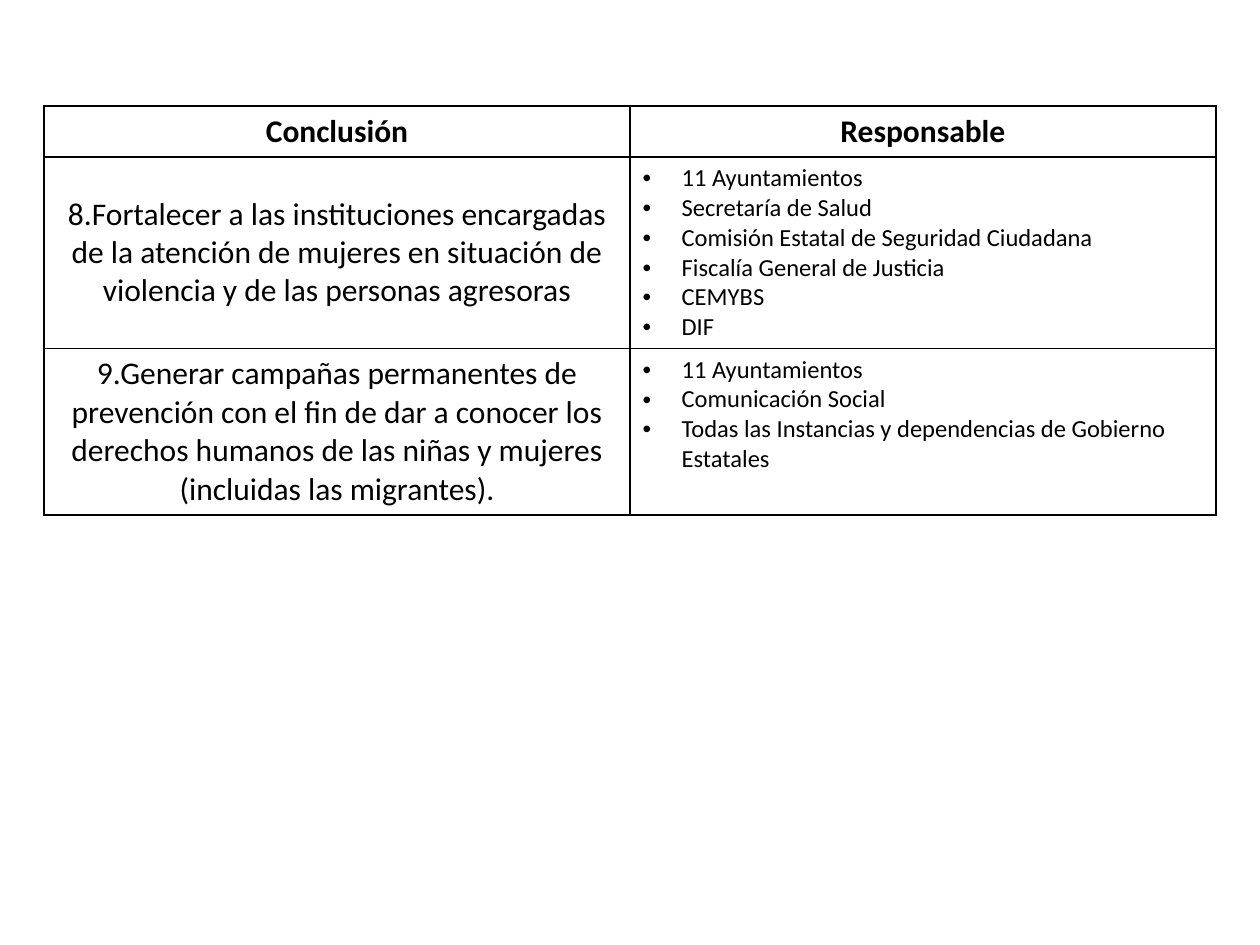
from lxml.etree import SubElement
from pptx import Presentation
from pptx.dml.color import RGBColor
from pptx.enum.text import MSO_ANCHOR, PP_ALIGN
from pptx.oxml.ns import qn
from pptx.util import Inches, Pt

SLIDE_WIDTH, SLIDE_HEIGHT = Inches(10), Inches(7.5)
TABLE_LEFT, TABLE_TOP = Inches(0.35), Inches(0.84)
COLUMN_WIDTH = Inches(4.65)
ROW_HEIGHTS = [Inches(0.4), Inches(1.52), Inches(1.32)]
BULLET_INDENT = Inches(0.31)
INK, PAPER = "000000", "FFFFFF"

HEADINGS = ["Conclusión", "Responsable"]
CONCLUSIONS = [
    (
        "8.Fortalecer a las instituciones encargadas de la atención de mujeres "
        "en situación de violencia y de las personas agresoras",
        [
            "11 Ayuntamientos",
            "Secretaría de Salud",
            "Comisión Estatal de Seguridad Ciudadana",
            "Fiscalía General de Justicia",
            "CEMYBS",
            "DIF",
        ],
    ),
    (
        "9.Generar campañas permanentes de prevención con el fin de dar a conocer "
        "los derechos humanos de las niñas y mujeres (incluidas las migrantes).",
        [
            "11 Ayuntamientos",
            "Comunicación Social",
            "Todas las Instancias y dependencias de Gobierno Estatales",
        ],
    ),
]


def colour(hex_code):
    """Turn a hex string into a colour."""
    return RGBColor.from_string(hex_code)


def frame_cell(cell):
    """Give a cell thin borders on all sides and a plain fill."""
    properties = cell._tc.get_or_add_tcPr()
    for side in ("a:lnL", "a:lnR", "a:lnT", "a:lnB"):
        border = SubElement(properties, qn(side), w=str(Pt(1)))
        border_fill = SubElement(border, qn("a:solidFill"))
        SubElement(border_fill, qn("a:srgbClr"), val=INK)
    cell.fill.solid()
    cell.fill.fore_color.rgb = colour(PAPER)


def write_cell(cell, lines, size, bold=False):
    """Write one paragraph per line and format its text."""
    frame_cell(cell)
    cell.text_frame.text = "\n".join(lines)
    for paragraph in cell.text_frame.paragraphs:
        for run in paragraph.runs:
            run.font.name = "Calibri"
            run.font.size = Pt(size)
            run.font.bold = bold
            run.font.color.rgb = colour(INK)


def write_centred(cell, text, bold=False):
    """Write a centred statement in the middle of a cell."""
    write_cell(cell, [text], 18, bold)
    cell.vertical_anchor = MSO_ANCHOR.MIDDLE
    cell.text_frame.paragraphs[0].alignment = PP_ALIGN.CENTER


def write_bullets(cell, items):
    """Write a bulleted list with a hanging indent."""
    write_cell(cell, items, 14)
    for paragraph in cell.text_frame.paragraphs:
        properties = paragraph._p.get_or_add_pPr()
        properties.set("marL", str(BULLET_INDENT))
        properties.set("indent", str(-BULLET_INDENT))
        SubElement(properties, qn("a:buFont"), typeface="Arial")
        SubElement(properties, qn("a:buChar"), char="•")


def add_conclusions_table(slide):
    """Add the table of conclusions and those responsible for them."""
    table = slide.shapes.add_table(
        len(ROW_HEIGHTS), len(HEADINGS), TABLE_LEFT, TABLE_TOP,
        COLUMN_WIDTH * len(HEADINGS), sum(ROW_HEIGHTS),
    ).table
    table.horz_banding = False
    for row, height in zip(table.rows, ROW_HEIGHTS):
        row.height = height
    for column, heading in enumerate(HEADINGS):
        write_centred(table.cell(0, column), heading, bold=True)
    for row, (conclusion, responsible) in enumerate(CONCLUSIONS, start=1):
        write_centred(table.cell(row, 0), conclusion)
        write_bullets(table.cell(row, 1), responsible)


def main():
    """Build and save the slide."""
    presentation = Presentation()
    presentation.slide_width = SLIDE_WIDTH
    presentation.slide_height = SLIDE_HEIGHT
    slide = presentation.slides.add_slide(presentation.slide_layouts[6])
    add_conclusions_table(slide)
    presentation.save("out.pptx")


if __name__ == "__main__":
    main()
